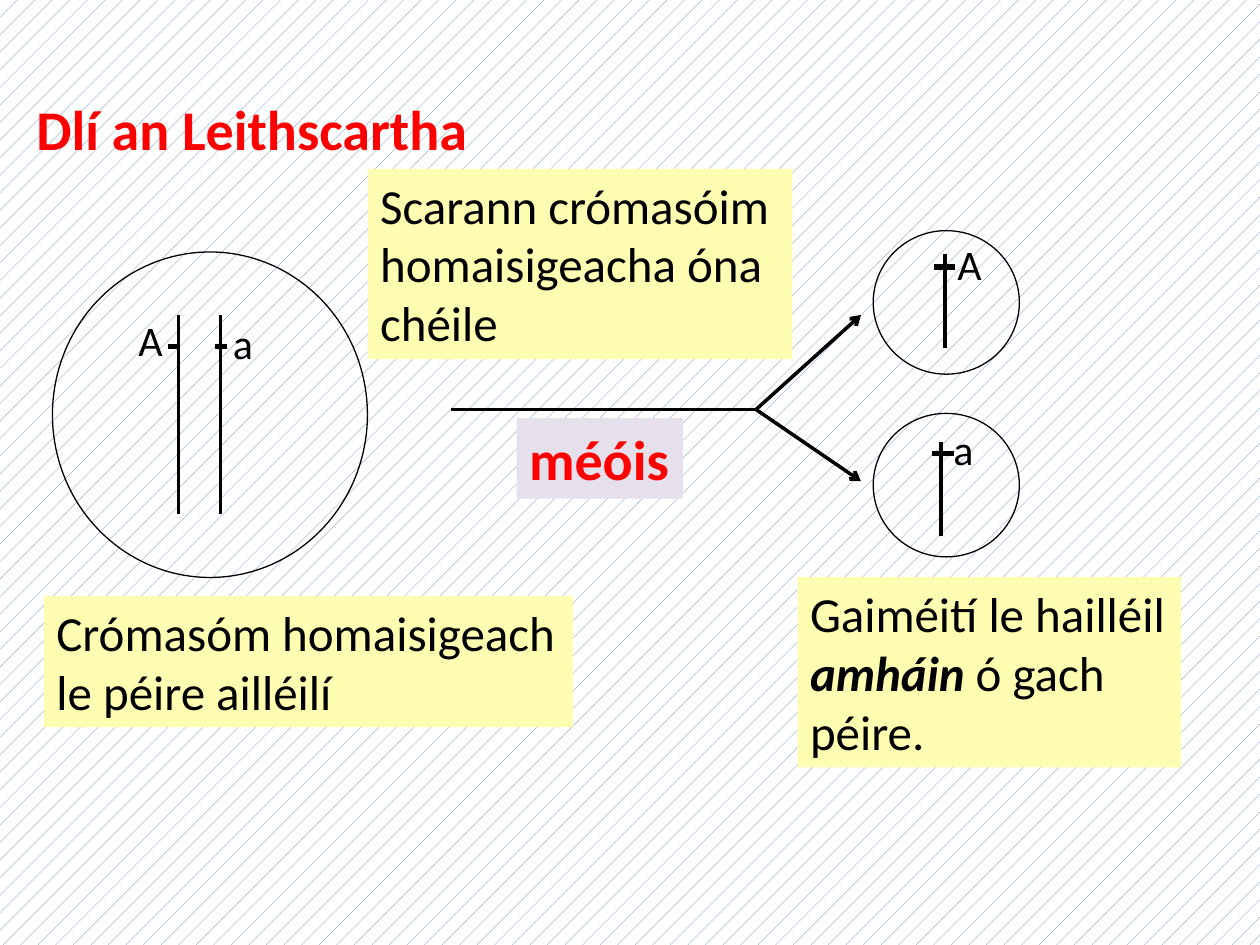
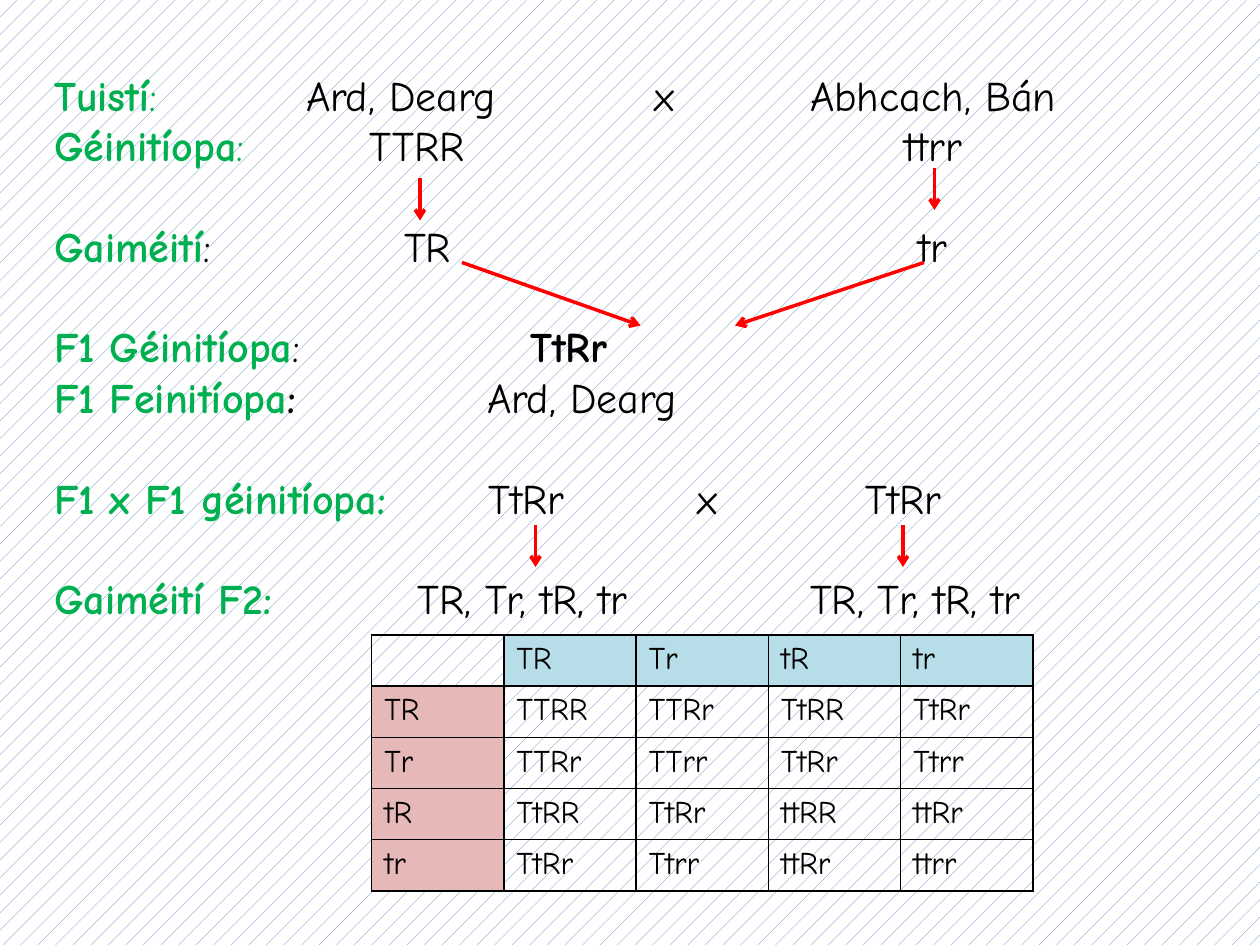
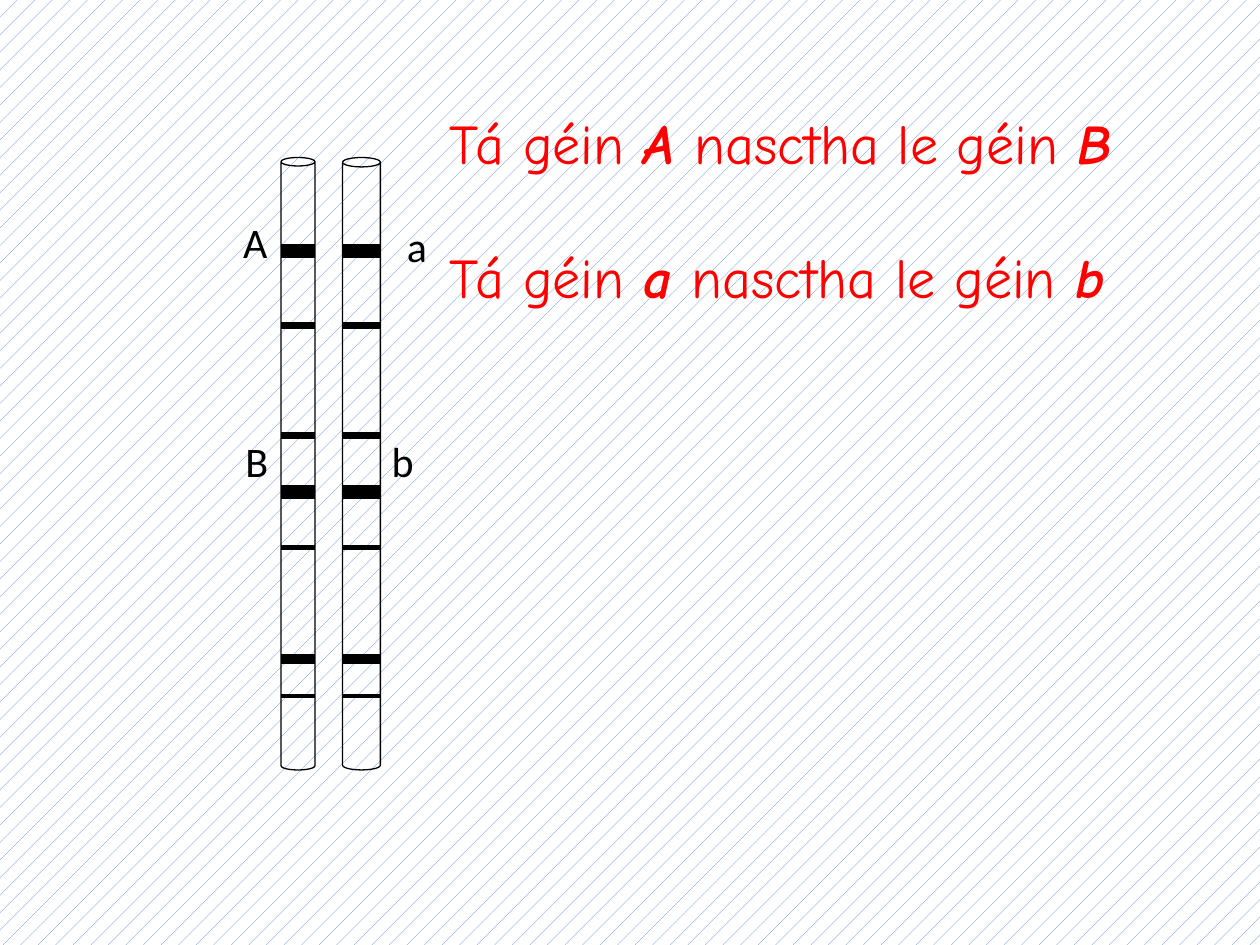
"""Build three Irish-language genetics slides: segregation, a dihybrid cross and linkage."""
from dataclasses import dataclass

from lxml import etree
from pptx import Presentation
from pptx import util as u
from pptx.dml.color import RGBColor
from pptx.enum import dml, shapes, text
from pptx.oxml import ns


@dataclass(frozen=True)
class Theme:
    black: str = "000000"
    red: str = "FF0000"
    green: str = "00B050"
    white: str = "FFFFFF"
    pattern: str = "4F81BD"
    note: str = "FFFDB1"
    process: str = "E6E0EC"
    column_gamete: str = "B7DEE8"
    row_gamete: str = "E6B9B8"
    plain: str = "Calibri"
    comic: str = "Comic Neue"
    heading_size: float = 32
    note_size: float = 28
    body_size: float = 24
    cell_size: float = 18
    outline: float = 0.75
    stroke: float = 2
    locus: float = 3


@dataclass(frozen=True)
class Run:
    words: str
    bold: bool = False
    italic: bool = False
    colour: str = ""


@dataclass(frozen=True)
class Para:
    runs: tuple
    gap: float = 0
    tabs: tuple = ()


THEME = Theme()
GAMETES = ("TR", "Tr", "tR", "tr")


def rgb(colour):
    """Turn a hex string into a colour."""
    return RGBColor.from_string(colour)


def points(*lengths):
    """Turn numbers into point lengths."""
    return [u.Pt(length) for length in lengths]


def add_xml(parent, tag, **attributes):
    """Append a DrawingML child element."""
    return etree.SubElement(parent, ns.qn(tag), attributes)


def style_font(font, name, size, colour):
    """Set typeface, size and colour."""
    font.name, font.size = name, u.Pt(size)
    font.color.rgb = rgb(colour)


def text_block(canvas, box, paras, size, colour=THEME.black, face=THEME.plain,
               fill=None, bold=False, wrap=True):
    """Add a text box whose paragraphs are strings or Para objects."""
    block = canvas.add_textbox(*points(*box))
    if fill:
        block.fill.solid()
        block.fill.fore_color.rgb = rgb(fill)
    frame = block.text_frame
    frame.word_wrap = wrap
    frame.auto_size = text.MSO_AUTO_SIZE.SHAPE_TO_FIT_TEXT
    for index, para in enumerate(paras):
        if isinstance(para, str):
            para = Para((Run(para),))
        line = frame.add_paragraph() if index else frame.paragraphs[0]
        if para.gap:
            line.space_before = u.Pt(para.gap)
        if para.tabs:
            stops = add_xml(line._p.get_or_add_pPr(), "a:tabLst")
            for stop in para.tabs:
                add_xml(stops, "a:tab", pos=str(u.Pt(stop)), algn="l")
        style_font(line.font, face, size, colour)
        line.font.bold = bold
        for part in para.runs:
            run = line.add_run()
            run.text = part.words
            if part.bold:
                run.font.bold = True
            if part.italic:
                run.font.italic = True
            if part.colour:
                run.font.color.rgb = rgb(part.colour)


def allele(canvas, left, top, letter, width=28.8):
    """Label a locus with its allele letter."""
    text_block(canvas, (left, top, width, 36), [letter], THEME.body_size, wrap=False)


def stroke(canvas, start, end, weight=THEME.stroke, colour=THEME.black, arrow=False):
    """Draw a straight line, with an arrowhead at its end if asked."""
    line = canvas.add_connector(shapes.MSO_CONNECTOR.STRAIGHT, *points(*start, *end))
    line.line.width = u.Pt(weight)
    line.line.color.rgb = rgb(colour)
    properties = line._element.spPr
    if arrow:
        add_xml(properties.find(ns.qn("a:ln")), "a:tailEnd", type="arrow")
    add_xml(properties, "a:effectLst")


def outline(canvas, preset, box):
    """Draw an unfilled preset shape with a thin black line."""
    figure = canvas.add_shape(preset, *points(*box))
    figure.shadow.inherit = False
    figure.fill.background()
    figure.line.color.rgb = rgb(THEME.black)
    figure.line.width = u.Pt(THEME.outline)


def strand(canvas, x, top, bottom, locus_left, locus_right, locus_y):
    """Draw a simple chromosome with one locus mark."""
    stroke(canvas, (x, top), (x, bottom))
    stroke(canvas, (locus_left, locus_y), (locus_right, locus_y), THEME.locus)


def banded_chromosome(canvas, left, width):
    """Draw a grouped cylinder crossed by bands."""
    group = canvas.add_group_shape().shapes
    outline(group, shapes.MSO_SHAPE.CAN, (left, 90, width, 350))
    bands = ((143.3, 8.25), (185.8, 4), (249.1, 4), (281.2, 8.25),
             (312.8, 3), (376.6, 6), (397.8, 2))
    for y, weight in bands:
        stroke(group, (left, y), (left + width, y), weight)


def border_cell(cell):
    """Give a cell black borders on all sides."""
    properties = cell._tc.get_or_add_tcPr()
    for position, side in enumerate(("a:lnL", "a:lnR", "a:lnT", "a:lnB")):
        edge = etree.Element(ns.qn(side), w=str(u.Pt(1)))
        add_xml(add_xml(edge, "a:solidFill"), "a:srgbClr", val=THEME.black)
        properties.insert(position, edge)


def offspring(mother, father):
    """Join two gametes gene by gene, dominant allele first."""
    return "".join("".join(sorted(pair)) for pair in zip(mother, father))


def punnett_square(canvas, left, top, column_width, row_height):
    """Add the table of gametes and offspring genotypes."""
    count = len(GAMETES) + 1
    table = canvas.add_table(count, count, *points(
        left, top, column_width * count, row_height * count)).table
    table.first_row = table.horz_banding = False
    heads = ("",) + GAMETES
    for r, row_head in enumerate(heads):
        table.rows[r].height = u.Pt(row_height)
        for c, column_head in enumerate(heads):
            table.columns[c].width = u.Pt(column_width)
            cell = table.cell(r, c)
            cell.text = offspring(row_head, column_head) if r and c else row_head or column_head
            style_font(cell.text_frame.paragraphs[0].font,
                       THEME.comic, THEME.cell_size, THEME.black)
            if bool(r) != bool(c):
                cell.fill.solid()
                cell.fill.fore_color.rgb = rgb(THEME.row_gamete if r else THEME.column_gamete)
            else:
                cell.fill.background()
            border_cell(cell)


def segregation(canvas):
    """Show one allele pair parting into two gametes."""
    oval = shapes.MSO_SHAPE.OVAL
    outline(canvas, oval, (30, 144, 180, 186))
    strand(canvas, 102, 180, 294, 96, 103, 198)
    strand(canvas, 126, 180, 294, 123, 130, 198)
    allele(canvas, 72, 176.4, "A")
    allele(canvas, 126, 177.8, "a", 25.9)

    fork = (432, 234)
    stroke(canvas, (257.8, 234), fork)
    for gamete_y in (180, 275):
        stroke(canvas, fork, (492, gamete_y), arrow=True)
    for top in (131.8, 236.2):
        outline(canvas, oval, (499, top, 83.5, 82))
    strand(canvas, 540, 145.4, 198.7, 533.5, 545.8, 152.6)
    strand(canvas, 537.8, 252.7, 306, 532.8, 545, 259.2)
    allele(canvas, 540, 132.5, "A")
    allele(canvas, 537.8, 238.3, "a", 25.9)

    only = Para((Run("amháin ", bold=True, italic=True), Run("ó gach")))
    notes = (
        ((25.2, 340.6, 302.4, 75), ["Crómasóm homaisigeach", "le péire ailléilí"]),
        ((210.2, 96.5, 242.6, 108.7), ["Scarann crómasóim", "homaisigeacha óna chéile"]),
        ((455.8, 329.8, 219, 108.7), ["Gaiméití le hailléil", only, "péire."]),
    )
    for box, lines in notes:
        text_block(canvas, box, lines, THEME.note_size, fill=THEME.note)
    text_block(canvas, (295.2, 239, 95, 46), ["méóis"], THEME.heading_size,
               THEME.red, fill=THEME.process, bold=True, wrap=False)
    text_block(canvas, (13.7, 50.4, 337.7, 46), ["Dlí an Leithscartha"],
               THEME.heading_size, THEME.red, bold=True)


def cross_row(label, colon, entries, tabs, gap=0):
    """Make a row of the cross: a green label, then entries at tab stops."""
    entry_run = entries if isinstance(entries, Run) else Run("\t" + "\t".join(entries))
    return Para((Run(label, bold=True, colour=THEME.green), colon, entry_run), gap, tabs)


def dihybrid_cross(canvas):
    """Show a dihybrid cross down to the F2 generation."""
    green_colon, black_colon = Run(":", colour=THEME.green), Run(":")
    bold_colon = Run(":", bold=True)
    bold_green_colon = Run(":", bold=True, colour=THEME.green)
    gap = 28.75
    rows = [
        cross_row("Tuistí", green_colon, ("Ard, Dearg", "x", "Abhcach, Bán"), (144, 343, 432)),
        cross_row("Géinitíopa", green_colon, ("TTRR", "ttrr"), (180.5, 486)),
        cross_row("Gaiméití", black_colon, ("TR", "tr"), (200, 494), gap),
        cross_row("F1 Géinitíopa", black_colon, Run("\tTtRr", bold=True), (272,), gap),
        cross_row("F1 Feinitíopa", bold_colon, ("Ard, Dearg",), (247.5,)),
        cross_row("F1 x F1 géinitíopa", bold_green_colon, ("TtRr", "x", "TtRr"),
                  (248.5, 367.5, 463.5), gap),
        cross_row("Gaiméití F2", bold_green_colon, (", ".join(GAMETES),) * 2,
                  (207.5, 432), gap),
    ]
    text_block(canvas, (23.8, 36, 678.2, 327), rows, THEME.body_size, face=THEME.comic)
    punnett_square(canvas, 212.4, 362.9, 75.6, 29.25)
    arrows = (
        ((240, 102), (240, 126)), ((534, 96), (534, 120)),
        ((264, 150), (366, 186)), ((528, 150), (420, 186)),
        ((306, 300), (306, 324)), ((516, 300), (516, 324)),
    )
    for start, end in arrows:
        stroke(canvas, start, end, colour=THEME.red, arrow=True)


def linkage(canvas):
    """Show linked genes on a homologous pair."""
    banded_chromosome(canvas, 160.6, 19.4)
    banded_chromosome(canvas, 195.8, 21.6)
    allele(canvas, 131.8, 120.2, "A")
    allele(canvas, 225.4, 122.4, "a", 25.9)
    allele(canvas, 133.2, 245.5, "B", 27.5)
    allele(canvas, 216.7, 245.5, "b", 27.4)
    statements = [
        Para((Run("Tá géin "), Run(first + " ", bold=True, italic=True),
              Run("nasctha le géin "), Run(second, bold=True, italic=True)), gap)
        for first, second, gap in (("A", "B", 0), ("a", "b", 38.4))
    ]
    text_block(canvas, (249.8, 58.3, 430.6, 123.8), statements,
               THEME.heading_size, THEME.red, THEME.comic)


def main():
    """Build and save the presentation."""
    deck = Presentation()
    deck.slide_width, deck.slide_height = points(720, 540)
    backdrop = deck.slide_master.background.fill
    backdrop.patterned()
    backdrop.pattern = dml.MSO_PATTERN.PERCENT_5
    backdrop.fore_color.rgb = rgb(THEME.pattern)
    backdrop.back_color.rgb = rgb(THEME.white)
    for draw in (segregation, dihybrid_cross, linkage):
        draw(deck.slides.add_slide(deck.slide_layouts[6]).shapes)
    deck.save("out.pptx")


if __name__ == "__main__":
    main()
